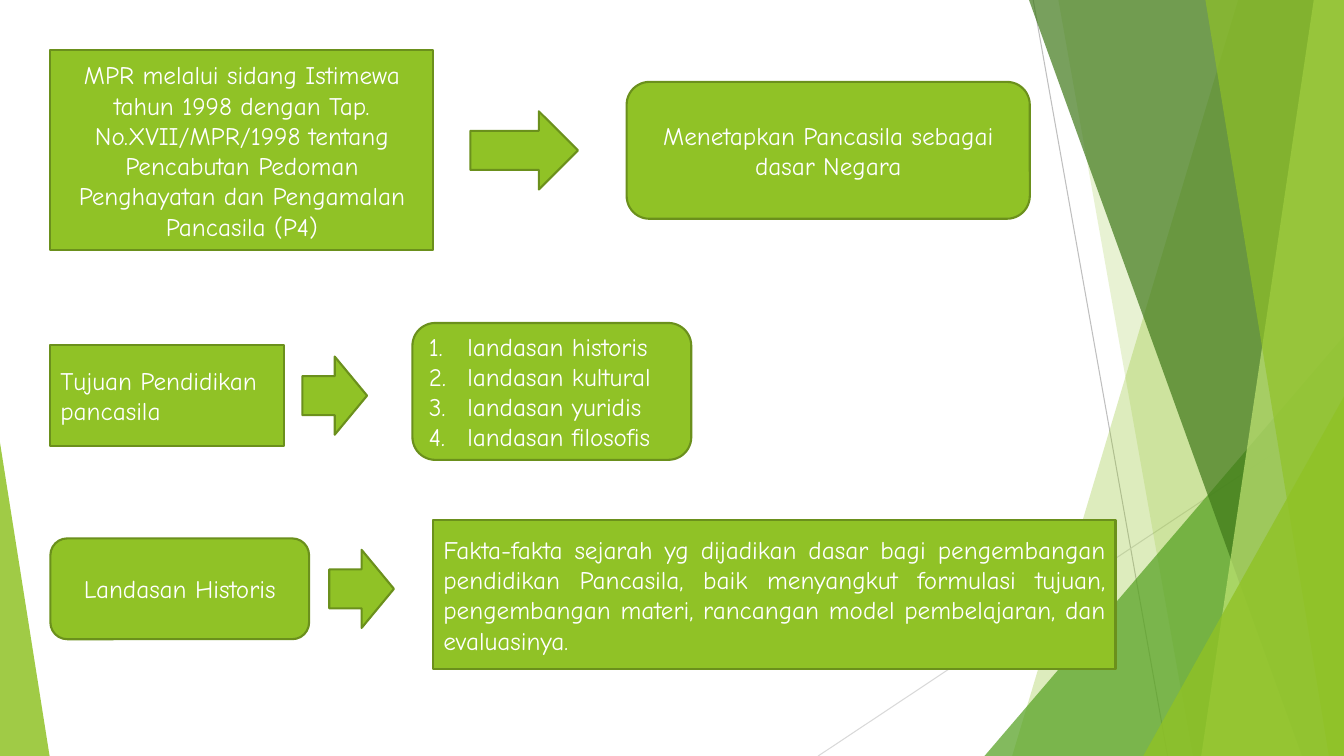
from dataclasses import dataclass

from lxml.etree import SubElement
from pptx import Presentation
from pptx.dml.color import RGBColor
from pptx.enum.shapes import MSO_CONNECTOR, MSO_SHAPE
from pptx.enum.text import MSO_ANCHOR, PP_ALIGN
from pptx.oxml.ns import qn
from pptx.util import Inches, Pt


@dataclass(frozen=True)
class Theme:
    lime: str = "90C226"
    leaf: str = "54A021"
    pine: str = "3F7819"
    pale: str = "C0E474"
    edge: str = "6B901C"
    text: str = "FFFFFF"
    gray: str = "BFBFBF"
    mist: str = "D9D9D9"
    font: str = "Comic Neue"
    size: float = 18
    rim: float = 1.5
    hair: float = 0.75


THEME = Theme()
WIDE, HIGH = Inches(13.33), Inches(7.5)
COLS, ROWS = 160, 90


def col(num):
    return round(WIDE * num / COLS)


def row(num):
    return round(HIGH * num / ROWS)


def paint(shape, tone, share=100, edge=None):
    shape.shadow.inherit = False
    shape.fill.solid()
    shape.fill.fore_color.rgb = RGBColor.from_string(tone)
    if share < 100:
        node = shape.fill._xPr.find(qn("a:solidFill"))[0]
        SubElement(node, qn("a:alpha"), val=str(share * 1000))
    if edge:
        shape.line.color.rgb = RGBColor.from_string(edge)
        shape.line.width = Pt(THEME.rim)
    else:
        shape.line.fill.background()


def hairline(slide, start, end, tone):
    line = slide.shapes.add_connector(
        MSO_CONNECTOR.STRAIGHT, col(start[0]), row(start[1]), col(end[0]), row(end[1]))
    line.line.color.rgb = RGBColor.from_string(tone)
    line.line.width = Pt(THEME.hair)
    SubElement(line._element.spPr, qn("a:effectLst"))


def shard(slide, top, base, tone, share):
    pen = slide.shapes.build_freeform(col(top), 0)
    pen.add_line_segments([(col(COLS), 0), (col(COLS), row(ROWS)), (col(base), row(ROWS))])
    paint(pen.convert_to_shape(), tone, share)


def wedge(slide, left, top, width, peak, tone, share):
    shape = slide.shapes.add_shape(
        MSO_SHAPE.ISOSCELES_TRIANGLE, col(left), row(top), col(width), row(ROWS - top))
    shape.adjustments[0] = peak
    paint(shape, tone, share)


def block(slide, kind, left, mid, width, height):
    shape = slide.shapes.add_shape(
        kind, col(left), row(mid - height / 2), col(width), row(height))
    paint(shape, THEME.lime, edge=THEME.edge)
    return shape


def arrow(slide, left, mid, width):
    block(slide, MSO_SHAPE.RIGHT_ARROW, left, mid, width, 9.3)


def number(para):
    props = para._p.get_or_add_pPr()
    inset = Inches(0.38)
    props.set("marL", str(inset))
    props.set("indent", str(-inset))
    SubElement(props, qn("a:buFont"), typeface="+mj-lt")
    SubElement(props, qn("a:buAutoNum"), type="arabicPeriod")


def label(shape, text, align, listed=False):
    frame = shape.text_frame
    frame.word_wrap = True
    frame.vertical_anchor = MSO_ANCHOR.MIDDLE
    frame.text = text
    for para in frame.paragraphs:
        para.alignment = align
        if listed:
            number(para)
        for run in para.runs:
            run.font.name = THEME.font
            run.font.size = Pt(THEME.size)
            run.font.color.rgb = RGBColor.from_string(THEME.text)


def facet(slide):
    hairline(slide, (123, 0), (139, ROWS), THEME.gray)
    hairline(slide, (COLS, 48.4), (97.4, ROWS), THEME.mist)
    shard(slide, 147.4, 120.5, THEME.lime, 30)
    shard(slide, 126, 142, THEME.lime, 20)
    wedge(slide, 117.2, 40, 42.8, 1, THEME.leaf, 72)
    shard(slide, 122.5, 155, THEME.pine, 70)
    shard(slide, 156.4, 143, THEME.pale, 70)
    shard(slide, 143.5, 158.2, THEME.lime, 65)
    wedge(slide, 136.1, 47.2, 23.9, 1, THEME.lime, 80)
    wedge(slide, 0, 52.7, 5.9, 0, THEME.lime, 85)


def main():
    deck = Presentation()
    deck.slide_width, deck.slide_height = WIDE, HIGH
    slide = deck.slides.add_slide(deck.slide_layouts[6])
    facet(slide)

    rect, pill = MSO_SHAPE.RECTANGLE, MSO_SHAPE.ROUNDED_RECTANGLE
    edge, first, second, third = 6, 17.9, 47.1, 70.1

    label(block(slide, rect, edge, first, 45.6, 23.8),
          "MPR melalui sidang Istimewa tahun 1998 dengan Tap. No.XVII/MPR/1998 tentang "
          "Pencabutan Pedoman Penghayatan dan Pengamalan Pancasila (P4)", PP_ALIGN.CENTER)
    arrow(slide, 56, first, 12.8)
    label(block(slide, pill, 74.6, first, 48, 16.3),
          "Menetapkan Pancasila sebagai dasar Negara", PP_ALIGN.CENTER)

    label(block(slide, rect, edge, second, 27.8, 12),
          "Tujuan Pendidikan pancasila", PP_ALIGN.LEFT)
    arrow(slide, 36, second, 7.7)
    bases = ["historis", "kultural", "yuridis", "filosofis"]
    label(block(slide, pill, 49.1, second - 0.5, 33.2, 16.3),
          "\n".join(f"landasan {base}" for base in bases), PP_ALIGN.JUSTIFY, listed=True)

    label(block(slide, pill, edge, third, 30.8, 12), "Landasan Historis", PP_ALIGN.CENTER)
    arrow(slide, 39.2, third, 7.7)
    label(block(slide, rect, 51.6, third + 0.7, 81.2, 17.8),
          "Fakta-fakta sejarah yg dijadikan dasar bagi pengembangan pendidikan Pancasila, "
          "baik menyangkut formulasi tujuan, pengembangan materi, rancangan model "
          "pembelajaran, dan evaluasinya.", PP_ALIGN.JUSTIFY)

    deck.save("out.pptx")


if __name__ == "__main__":
    main()
